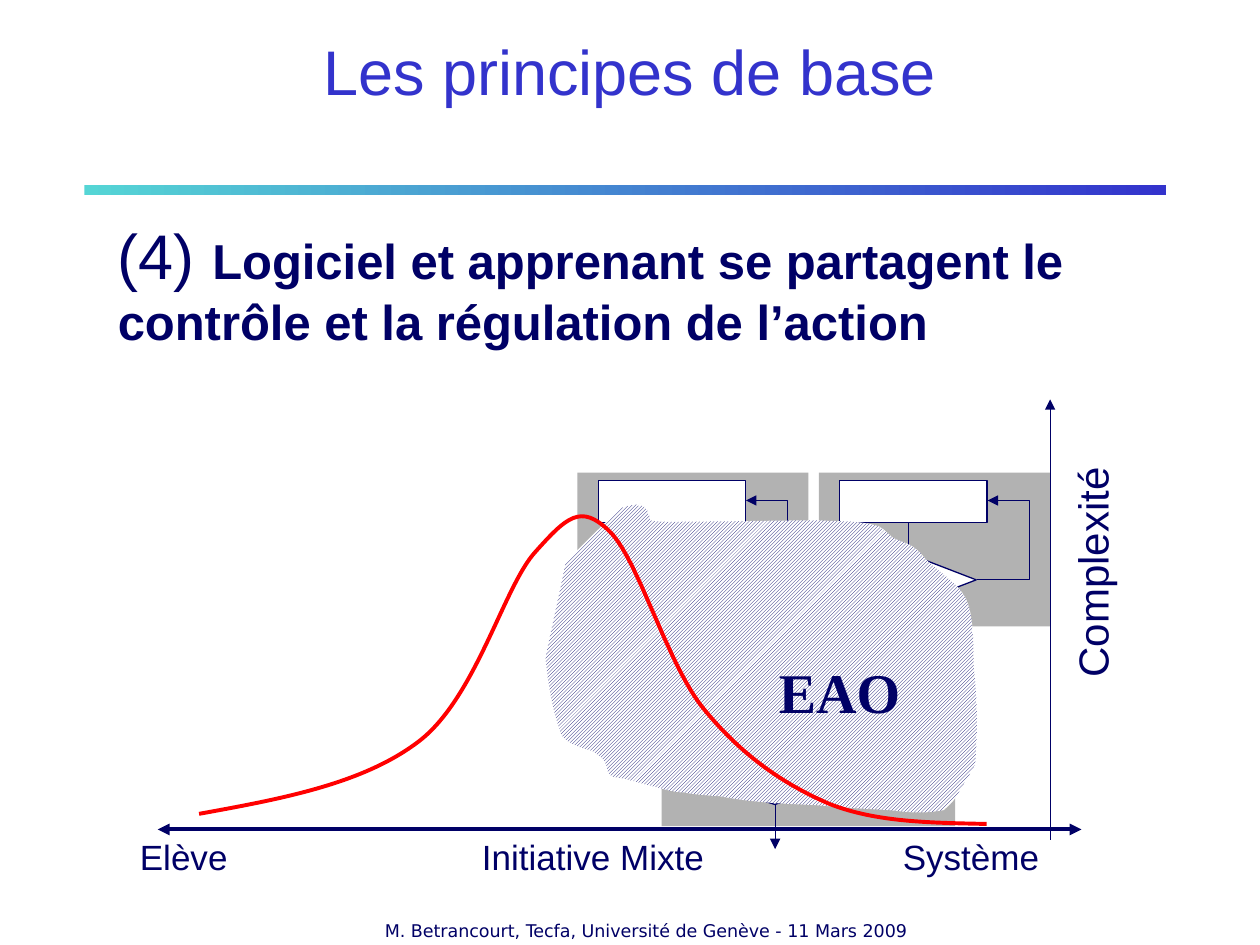
from lxml.etree import SubElement
from pptx import Presentation
from pptx.dml.color import RGBColor
from pptx.enum.dml import MSO_PATTERN
from pptx.enum.shapes import MSO_CONNECTOR, MSO_SHAPE
from pptx.enum.text import MSO_ANCHOR, MSO_AUTO_SIZE, PP_ALIGN
from pptx.oxml.ns import qn
from pptx.util import Cm, Pt

COLORS = {key: RGBColor.from_string(value) for key, value in {
    "navy": "000066", "blue": "3333CC", "teal": "55D5D5",
    "gray": "B2B2B2", "white": "FFFFFF", "red": "FF0000"}.items()}
POINT = Cm(2.54) / 100  # unit of the curve points


def outline(shape, color=None, width=0.75, ends=()):
    """Set the line, its arrowheads and an empty effect list."""
    if color:
        shape.line.color.rgb = COLORS[color]
        shape.line.width = Pt(width)
    else:
        shape.line.fill.background()
    properties = shape._element.spPr
    for end in ends:
        SubElement(properties.get_or_add_ln(), qn(f"a:{end}"), type="triangle")
    SubElement(properties, qn("a:effectLst"))


def add_curve(shapes, start, segments, close):
    """Draw Bezier segments, each given as two controls and an end point."""
    builder = shapes.build_freeform(*start, scale=POINT)
    builder.add_line_segments([segment[4:] for segment in segments], close=close)
    curve = builder.convert_to_shape()
    left = min([start[0]] + [segment[4] for segment in segments])
    top = min([start[1]] + [segment[5] for segment in segments])
    for step, segment in zip(list(curve._element.iter(qn("a:lnTo"))), segments):
        step.tag = qn("a:cubicBezTo")
        for index in (0, 2):
            control = SubElement(step, qn("a:pt"), x=str(segment[index] - left),
                                 y=str(segment[index + 1] - top))
            step.insert(index // 2, control)
    return curve


deck = Presentation()
deck.slide_width, deck.slide_height = Cm(25.4), Cm(19.05)
page = deck.slides.add_slide(deck.slide_layouts[1])
shapes = page.shapes

# Gradient rule under the title
rule = shapes.add_shape(MSO_SHAPE.RECTANGLE, Cm(1.7), Cm(3.73), Cm(21.8), Cm(0.2))
rule.fill.gradient()
rule.fill.gradient_angle = 0
for stop, color, position in zip(rule.fill.gradient_stops, ("teal", "blue"), (0, 1)):
    stop.color.rgb = COLORS[color]
    stop.position = position
outline(rule)

# Three flowcharts: left, top, horizontal and vertical scale
for left, top, across, down in ((11.64, 9.53, 1, 1), (16.51, 9.53, 1, 1),
                                (13.34, 13.34, 1.27, 1.07)):
    for kind, x, y, width, height, fill, line in (
            (MSO_SHAPE.RECTANGLE, 0, 0, 4.66, 3.1, "gray", None),
            (MSO_SHAPE.RECTANGLE, 0.42, 0.16, 2.97, 0.84, "white", "navy"),
            (MSO_SHAPE.DIAMOND, 0.42, 1.63, 2.75, 1.06, "white", "navy")):
        if kind == MSO_SHAPE.DIAMOND:
            stem_x = Cm(left + 1.8 * across)
            stem = shapes.add_connector(MSO_CONNECTOR.STRAIGHT,
                                        stem_x, Cm(top + down),
                                        stem_x, Cm(top + 3.53 * down))
            outline(stem, "navy", ends=["tailEnd"])
        part = shapes.add_shape(kind, Cm(left + x * across), Cm(top + y * down),
                                Cm(width * across), Cm(height * down))
        part.fill.solid()
        part.fill.fore_color.rgb = COLORS[fill]
        outline(part, line)
    corners = [(Cm(left + x * across), Cm(top + y * down))
               for x, y in ((3.18, 2.16), (4.24, 2.16), (4.24, 0.56), (3.4, 0.56))]
    builder = shapes.build_freeform(*corners[0])
    builder.add_line_segments(corners[1:], close=False)
    loop = builder.convert_to_shape()
    loop.fill.background()
    outline(loop, "navy", ends=["tailEnd"])

# Hatched EAO area
area = add_curve(shapes, (508, 400), [
    (489, 403, 495, 401, 471, 424), (464, 431, 449, 446, 449, 446),
    (444, 472, 438, 497, 433, 522), (435, 544, 438, 561, 445, 582),
    (448, 591, 470, 596, 470, 596), (474, 599, 480, 602, 481, 607),
    (482, 610, 482, 613, 484, 615), (487, 618, 492, 617, 495, 618),
    (506, 621, 518, 624, 529, 627), (534, 628, 538, 629, 543, 629),
    (552, 631, 571, 632, 571, 632), (597, 637, 622, 638, 647, 639),
    (667, 641, 687, 642, 706, 643), (723, 645, 732, 646, 749, 643),
    (751, 641, 755, 638, 757, 635), (763, 626, 774, 607, 774, 607),
    (776, 581, 776, 556, 773, 531), (772, 517, 774, 489, 766, 474),
    (759, 462, 748, 456, 737, 446), (733, 443, 731, 438, 726, 435),
    (721, 431, 715, 430, 709, 427), (705, 424, 702, 420, 698, 418),
    (685, 413, 664, 414, 650, 413), (616, 413, 583, 414, 549, 414),
    (538, 414, 527, 415, 516, 413), (516, 412, 515, 403, 509, 401),
    (500, 403, 500, 404, 508, 400)], close=True)
area.fill.patterned()
area.fill.pattern = MSO_PATTERN.LIGHT_UPWARD_DIAGONAL
area.fill.fore_color.rgb = COLORS["navy"]
area.fill.back_color.rgb = COLORS["white"]
outline(area)

# Axes and complexity curve
for x1, y1, x2, y2, width, ends in (
        (3.18, 16.72, 21.8, 16.72, 2.25, ["headEnd", "tailEnd"]),
        (21.17, 16.93, 21.17, 8.05, 0.75, ["tailEnd"])):
    axis = shapes.add_connector(MSO_CONNECTOR.STRAIGHT, Cm(x1), Cm(y1), Cm(x2), Cm(y2))
    outline(axis, "navy", width, ends)
complexity = add_curve(shapes, (158, 646), [
    (224, 634, 289, 622, 333, 588), (378, 553, 400, 465, 425, 438),
    (450, 410, 461, 400, 483, 421), (506, 442, 529, 526, 558, 562),
    (588, 599, 621, 622, 658, 638), (696, 653, 740, 653, 783, 654)], close=False)
complexity.fill.background()
outline(complexity, "red", 2.25)

# Texts: holder, position, alignment, rotation and runs of (text, size, bold)
LEFT, CENTER = PP_ALIGN.LEFT, PP_ALIGN.CENTER
body = page.placeholders[1]
for holder, place, align, turn, font, color, runs in (
        (shapes.title, (1.9, 0.53, 21.59, 3.18), CENTER, 0, "Arial", "blue",
         [("Les principes de base", 36, False)]),
        (body, (2.12, 4.23, 22.65, 3), LEFT, 0, "Arial", "navy",
         [("(4) ", 36, False),
          ("Logiciel et apprenant se partagent le contrôle et la régulation de l’action",
           28, True)]),
        (None, (7.2, 18.42, 11.64, 1.06), CENTER, 0, "DejaVu Sans", "navy",
         [("M. Betrancourt, Tecfa, Université de Genève - 11 Mars 2009", 10, False)]),
        (None, (1.06, 16.72, 5.29, 1.1), CENTER, 0, "Arial", "navy",
         [("Elève", 20, False)]),
        (None, (9.31, 16.72, 5.29, 1.1), CENTER, 0, "Arial", "navy",
         [("Initiative Mixte", 20, False)]),
        (None, (16.93, 16.72, 5.29, 1.1), CENTER, 0, "Arial", "navy",
         [("Système", 20, False)]),
        (None, (19.15, 10.41, 5.72, 1.27), LEFT, -90, "Arial", "navy",
         [("Complexité", 24, False)]),
        (None, (15.45, 13.13, 2.97, 1.6), LEFT, 0, "Times New Roman", "navy",
         [("EAO", 32, True)])):
    lengths = [Cm(value) for value in place]
    box = holder or shapes.add_textbox(*lengths)
    for name, value in zip(("left", "top", "width", "height"), lengths):
        setattr(box, name, value)
    box.rotation = turn
    frame = box.text_frame
    anchor = MSO_ANCHOR.MIDDLE if holder is shapes.title else MSO_ANCHOR.TOP
    for name, value in {"word_wrap": True, "auto_size": MSO_AUTO_SIZE.NONE,
                        "vertical_anchor": anchor}.items():
        setattr(frame, name, value)
    para = frame.paragraphs[0]
    para.alignment = align
    para.space_before = Pt(0)
    for text, size, bold in runs:
        span = para.add_run()
        span.text = text
        for name, value in {"name": font, "size": Pt(size), "bold": bold}.items():
            setattr(span.font, name, value)
        span.font.color.rgb = COLORS[color]

# The body has no bullet and no indent
layout = body.text_frame.paragraphs[0]._p.get_or_add_pPr()
layout.set("marL", "0")
layout.set("indent", "0")
SubElement(layout, qn("a:buNone"))

deck.save("out.pptx")
